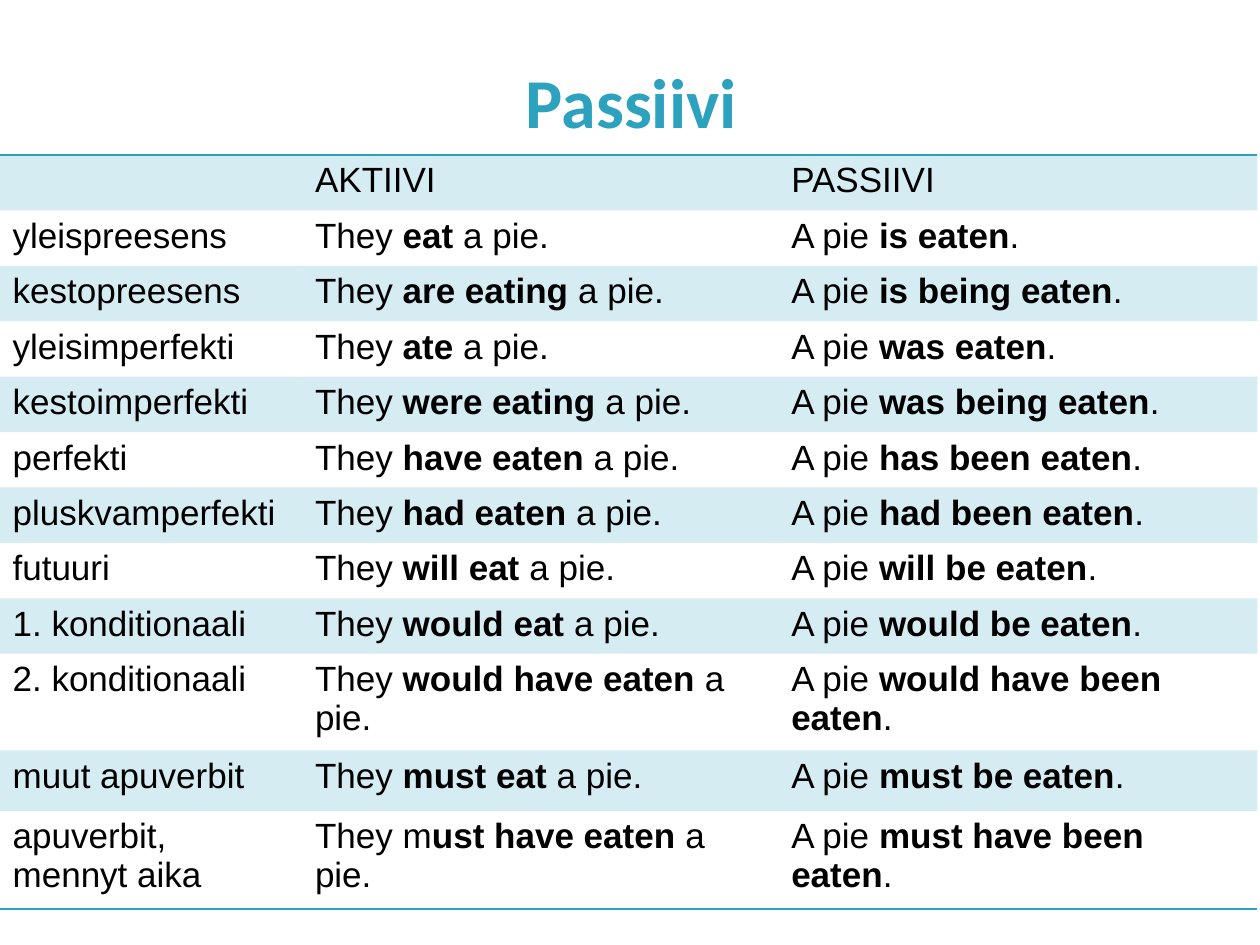
from dataclasses import dataclass

from pptx import Presentation
from pptx.dml.color import RGBColor as Rgb
from pptx.enum.text import MSO_ANCHOR as Anchor, PP_ALIGN as Align
from pptx.oxml import parse_xml
from pptx.oxml.ns import nsdecls, qn
from pptx.slide import Slide
from pptx.table import _Cell as Cell
from pptx.text.text import _Paragraph as Para
from pptx.util import Pt

PX = 9144
PLAIN = "{2D5ABB26-0587-4C30-8999-92F81FD0307C}"


@dataclass(frozen=True)
class Theme:
    teal: str = "2DA2BF"
    ink: str = "000000"
    tint: int = 20
    rule: int = 1
    head: str = "Calibri"
    body: str = "Arial"
    large: int = 40
    text: int = 20


@dataclass(frozen=True)
class Tense:
    name: str
    active: str
    passive: str
    high: int = 44


THEME = Theme()
WIDTHS = (240, 378, 380)
TENSES = (
    Tense("", "AKTIIVI", "PASSIIVI"),
    Tense("yleispreesens", "They *eat* a pie.", "A pie *is eaten*."),
    Tense("kestopreesens", "They *are eating *a pie.", "A pie *is being eaten*."),
    Tense("yleisimperfekti", "They *ate* a pie.", "A pie *was eaten*."),
    Tense("kestoimperfekti", "They *were eating* a pie.", "A pie *was being eaten*."),
    Tense("perfekti", "They *have eaten* a pie.", "A pie *has been eaten*."),
    Tense("pluskvamperfekti", "They *had eaten* a pie.", "A pie *had been eaten*."),
    Tense("futuuri", "They *will eat* a pie.", "A pie *will be eaten*."),
    Tense("1. konditionaali", "They *would eat* a pie.", "A pie *would be eaten*."),
    Tense("2. konditionaali", "They *would have eaten *a pie.",
          "A pie *would have been eaten*."),
    Tense("muut apuverbit", "They *must eat *a pie.", "A pie *must be eaten*.", 48),
    Tense("apuverbit, mennyt aika", "They m*ust have eaten *a pie.",
          "A pie *must have been eaten*.", 78),
)


def style(para: Para, face: str, size: int, color: str) -> None:
    font = para.font
    font.name = face
    font.size = Pt(size)
    font.color.rgb = Rgb.from_string(color)


def write(cell: Cell, text: str) -> None:
    para = cell.text_frame.paragraphs[0]
    style(para, THEME.body, THEME.text, THEME.ink)
    for i, part in enumerate(text.split("*")):
        if part:
            run = para.add_run()
            run.text = part
            if i % 2:
                run.font.bold = True


def shade(cell: Cell) -> None:
    cell.fill.solid()
    cell.fill.fore_color.rgb = Rgb.from_string(THEME.teal)
    color = next(cell._tc.tcPr.iter(qn("a:srgbClr")))
    color.append(parse_xml(f'<a:alpha {nsdecls("a")} val="{THEME.tint * 1000}"/>'))


def edge(cell: Cell, side: str) -> None:
    line = parse_xml(
        f'<a:ln{side} {nsdecls("a")} w="{Pt(THEME.rule)}"><a:solidFill>'
        f'<a:srgbClr val="{THEME.teal}"/></a:solidFill></a:ln{side}>')
    cell._tc.get_or_add_tcPr().insert(0, line)


def title(slide: Slide, text: str) -> None:
    box = slide.shapes.add_textbox(51 * PX, 36 * PX, 900 * PX, 87 * PX)
    frame = box.text_frame
    frame.word_wrap = True
    frame.vertical_anchor = Anchor.MIDDLE
    para = frame.paragraphs[0]
    para.text = text
    para.alignment = Align.CENTER
    style(para, THEME.head, THEME.large, THEME.teal)
    para.font.bold = True


def grid(slide: Slide, rows: tuple[Tense, ...]) -> None:
    high = sum(row.high for row in rows)
    frame = slide.shapes.add_table(
        len(rows), len(WIDTHS), 0, 123 * PX, sum(WIDTHS) * PX, high * PX)
    table = frame.table
    table.first_row = False
    table.horz_banding = False
    table._tbl.tblPr.find(qn("a:tableStyleId")).text = PLAIN
    for col, wide in zip(table.columns, WIDTHS):
        col.width = wide * PX
    last = len(rows) - 1
    for i, row in enumerate(rows):
        table.rows[i].height = row.high * PX
        for j, text in enumerate((row.name, row.active, row.passive)):
            cell = table.cell(i, j)
            write(cell, text)
            if i % 2:
                cell.fill.background()
            else:
                shade(cell)
            if i == 0:
                edge(cell, "T")
            if i == last:
                edge(cell, "B")


def main() -> None:
    deck = Presentation()
    deck.slide_width = 1000 * PX
    deck.slide_height = 750 * PX
    slide = deck.slides.add_slide(deck.slide_layouts[6])
    title(slide, "Passiivi")
    grid(slide, TENSES)
    deck.save("out.pptx")


if __name__ == "__main__":
    main()
